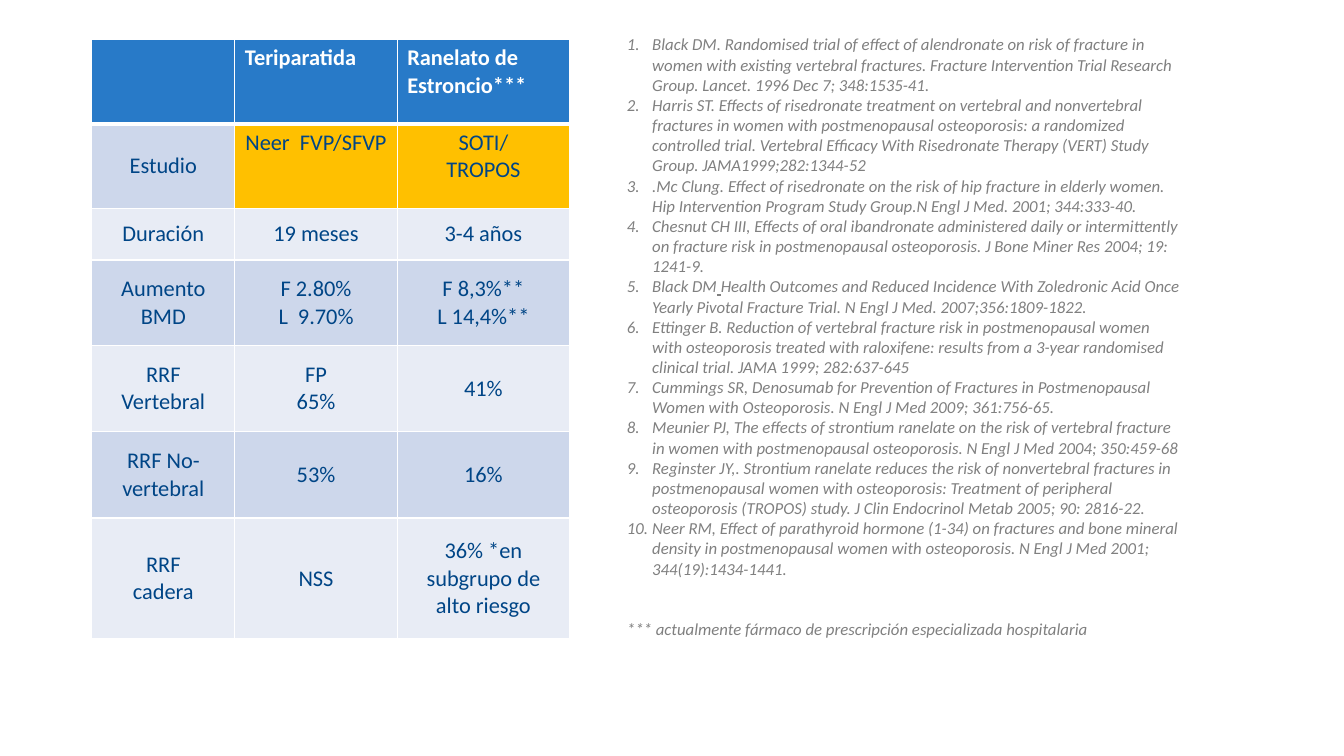
"""Build a slide with a table of osteoporosis drugs and its references."""
from lxml.etree import SubElement
from pptx import Presentation
from pptx.dml.color import RGBColor
from pptx.enum.text import MSO_ANCHOR as Anchor, PP_ALIGN as Align
from pptx.oxml.ns import qn
from pptx.util import Inches, Pt


def color(code):
    return RGBColor.from_string(code)


def write(para, text, size=16, ink="004586", bold=False, italic=False, line=False):
    run = para.add_run()
    run.text = text
    font = run.font
    font.name, font.size, font.color.rgb = "Calibri", Pt(size), color(ink)
    font.bold, font.italic, font.underline = bold, italic, line


deck = Presentation()
deck.slide_width, deck.slide_height = Inches(13.33), Inches(7.5)
slide = deck.slides.add_slide(deck.slide_layouts[6])

rows = [
    ["", "Teriparatida", "Ranelato de Estroncio***"],
    ["Estudio", "Neer  FVP/SFVP", "SOTI/\nTROPOS"],
    ["Duración", "19 meses", "3-4 años"],
    ["Aumento BMD", "F 2.80%\nL  9.70%", "F 8,3%**\nL 14,4%**"],
    ["RRF\nVertebral", "FP\n65%", "41%"],
    ["RRF No-vertebral", "53%", "16%"],
    ["RRF\ncadera", "NSS", "36% *en subgrupo de alto riesgo"],
]
wides = [1.42, 1.61, 1.71]
highs = [0.84, 0.84, 0.51, 0.85, 0.85, 0.86, 1.2]

frame = slide.shapes.add_table(len(rows), len(wides), Inches(0.91), Inches(0.39),
                               Inches(sum(wides)), Inches(sum(highs)))
table = frame.table
for col, wide in zip(table.columns, wides):
    col.width = Inches(wide)
for row, high in zip(table.rows, highs):
    row.height = Inches(high)

for r, row in enumerate(rows):
    for c, text in enumerate(row):
        cell = table.cell(r, c)
        head = r == 0
        study = r == 1 and c > 0
        props = cell._tc.get_or_add_tcPr()
        for side in "LRTB":
            thick = (r, side) in [(0, "B"), (1, "T")]
            edge = SubElement(props, qn("a:ln" + side), w=str(Pt(3 if thick else 1)))
            paint = SubElement(edge, qn("a:solidFill"))
            SubElement(paint, qn("a:srgbClr"), val="FFFFFF")
        cell.fill.solid()
        band = "CDD7EB" if r % 2 else "E8ECF5"
        cell.fill.fore_color.rgb = color("287AC8" if head else "FFC000" if study else band)
        cell.vertical_anchor = Anchor.TOP if head or study else Anchor.MIDDLE
        for n, part in enumerate(text.split("\n")):
            body = cell.text_frame
            para = body.add_paragraph() if n else body.paragraphs[0]
            para.alignment = Align.LEFT if head else Align.CENTER
            if part:
                write(para, part, ink="FFFFFF" if head else "004586", bold=head)

refs = [
    "Black DM. Randomised trial of effect of alendronate on risk of fracture in women with existing vertebral fractures. Fracture Intervention Trial Research Group. Lancet. 1996 Dec 7; 348:1535-41.",
    "Harris ST. Effects of risedronate treatment on vertebral and nonvertebral fractures in women with postmenopausal osteoporosis: a randomized controlled trial. Vertebral Efficacy With Risedronate Therapy (VERT) Study Group. JAMA1999;282:1344-52",
    ".Mc Clung. Effect of risedronate on the risk of hip fracture in elderly women. Hip Intervention Program Study Group.N Engl J Med. 2001; 344:333-40.",
    "Chesnut CH III, Effects of oral ibandronate administered daily or intermittently on fracture risk in postmenopausal osteoporosis. J Bone Miner Res 2004; 19: 1241-9.",
    "Black DM| |Health Outcomes and Reduced Incidence With Zoledronic Acid Once Yearly Pivotal Fracture Trial. N Engl J Med. 2007;356:1809-1822.",
    "Ettinger B. Reduction of vertebral fracture risk in postmenopausal women with osteoporosis treated with raloxifene: results from a 3-year randomised clinical trial. JAMA 1999; 282:637-645",
    "Cummings SR, Denosumab for Prevention of Fractures in Postmenopausal Women with Osteoporosis. N Engl J Med 2009; 361:756-65.",
    "Meunier PJ, The effects of strontium ranelate on the risk of vertebral fracture in women with postmenopausal osteoporosis. N Engl J Med 2004; 350:459-68",
    "Reginster JY,. Strontium ranelate reduces the risk of nonvertebral fractures in postmenopausal women with osteoporosis: Treatment of peripheral osteoporosis (TROPOS) study. J Clin Endocrinol Metab 2005; 90: 2816-22.",
    "Neer RM, Effect of parathyroid hormone (1-34) on fractures and bone mineral density in postmenopausal women with osteoporosis. N Engl J Med 2001; 344(19):1434-1441.",
]
note = "*** actualmente fármaco de prescripción especializada hospitalaria"

box = slide.shapes.add_textbox(Inches(6.12), Inches(0.29), Inches(5.71), Inches(6.36))
body = box.text_frame
body.word_wrap = True
gray = dict(size=12, ink="808080", italic=True)
for n, ref in enumerate(refs):
    para = body.add_paragraph() if n else body.paragraphs[0]
    props = para._p.get_or_add_pPr()
    props.set("marL", str(Inches(0.25)))
    props.set("indent", str(-Inches(0.25)))
    SubElement(props, qn("a:buFont"), typeface="+mj-lt")
    SubElement(props, qn("a:buAutoNum"), type="arabicPeriod")
    for part in ref.split("|"):
        write(para, part, line=part == " ", **gray)

para = body.add_paragraph()
para.space_before = Pt(29)
write(para, note, **gray)

deck.save("out.pptx")
